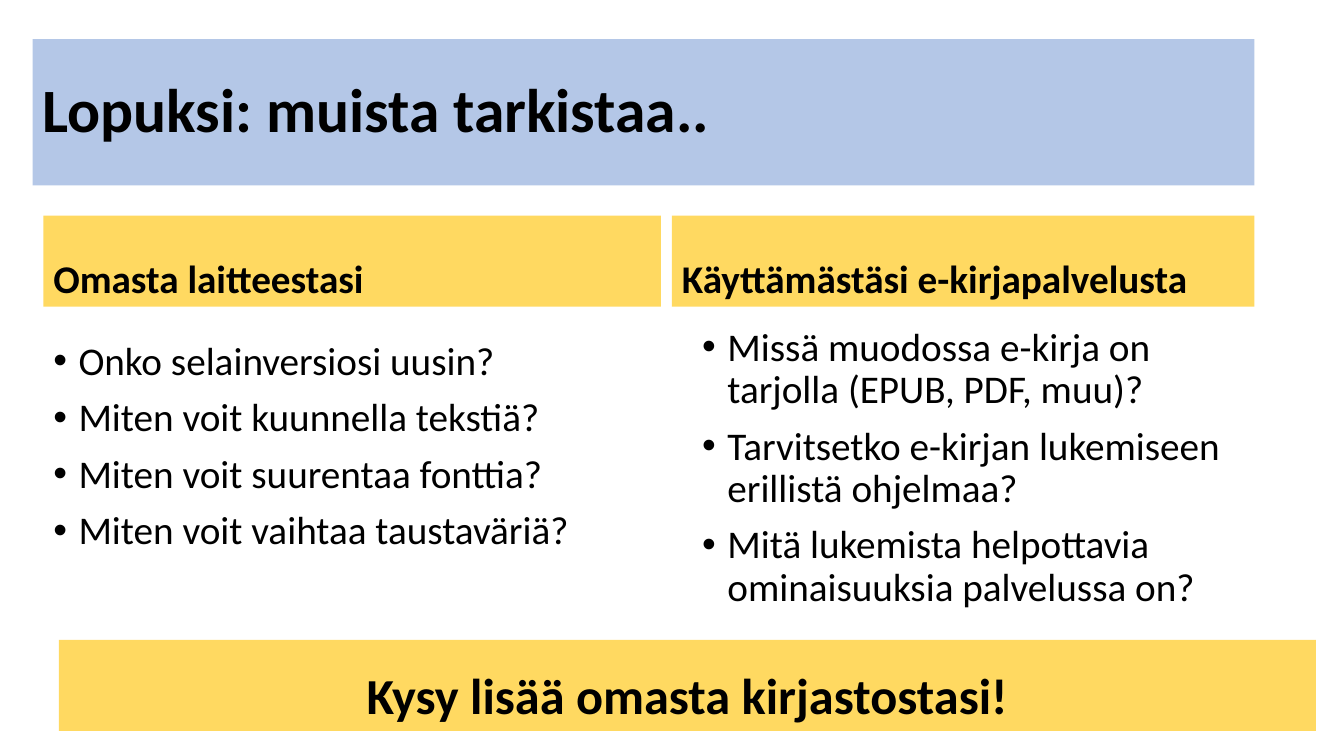
from lxml.etree import SubElement
from pptx import Presentation
from pptx.dml.color import RGBColor
from pptx.enum.shapes import MSO_SHAPE
from pptx.enum.text import MSO_ANCHOR, PP_ALIGN
from pptx.oxml.ns import qn
from pptx.util import Pt

COLORS = {"title": "B4C7E7", "band": "FFD961", "text": "000000"}
FONT = "Calibri"
BULLET_INDENT = Pt(18)
BAND_HEIGHT = 65
HEADING_TOP = 154

DEVICE_QUESTIONS = [
    "Onko selainversiosi uusin?",
    "Miten voit kuunnella tekstiä?",
    "Miten voit suurentaa fonttia?",
    "Miten voit vaihtaa taustaväriä?",
]
SERVICE_QUESTIONS = [
    "Missä muodossa e-kirja on tarjolla (EPUB, PDF, muu)?",
    "Tarvitsetko e-kirjan lukemiseen erillistä ohjelmaa?",
    "Mitä lukemista helpottavia ominaisuuksia palvelussa on?",
]


def add_bullet(paragraph):
    properties = paragraph._p.get_or_add_pPr()
    properties.set("marL", str(BULLET_INDENT))
    properties.set("indent", str(-BULLET_INDENT))
    SubElement(properties, qn("a:buFont"), typeface="Arial")
    SubElement(properties, qn("a:buChar"), char="•")


def write_text(shape, lines, size=28, bold=False, align=PP_ALIGN.LEFT,
               anchor=MSO_ANCHOR.TOP, space_before=10, bulleted=False):
    frame = shape.text_frame
    frame.word_wrap = True
    frame.vertical_anchor = anchor
    for index, line in enumerate(lines):
        paragraph = frame.add_paragraph() if index else frame.paragraphs[0]
        paragraph.alignment = align
        paragraph.line_spacing = 0.9
        paragraph.space_before = Pt(space_before)
        if bulleted:
            add_bullet(paragraph)
        run = paragraph.add_run()
        run.text = line
        run.font.name = FONT
        run.font.size = Pt(size)
        run.font.bold = bold
        run.font.color.rgb = RGBColor.from_string(COLORS["text"])


def add_band(slide, text, left, top, width, height=BAND_HEIGHT, color="band",
             anchor=MSO_ANCHOR.BOTTOM, **text_format):
    shape = slide.shapes.add_shape(
        MSO_SHAPE.RECTANGLE, Pt(left), Pt(top), Pt(width), Pt(height))
    shape.shadow.inherit = False
    shape.fill.solid()
    shape.fill.fore_color.rgb = RGBColor.from_string(COLORS[color])
    shape.line.fill.background()
    write_text(shape, [text], bold=True, anchor=anchor, **text_format)


def add_bullet_list(slide, lines, left, top, width, height):
    shape = slide.shapes.add_textbox(Pt(left), Pt(top), Pt(width), Pt(height))
    write_text(shape, lines, bulleted=True)


def main():
    presentation = Presentation()
    presentation.slide_width = Pt(960)
    presentation.slide_height = Pt(540)
    slide = presentation.slides.add_slide(presentation.slide_layouts[6])

    add_band(slide, "Lopuksi: muista tarkistaa..", 23.25, 28, 872.75, 104.5,
             color="title", anchor=MSO_ANCHOR.MIDDLE, size=44, space_before=0)
    add_band(slide, "Omasta laitteestasi", 31, HEADING_TOP, 441)
    add_bullet_list(slide, DEVICE_QUESTIONS, 31, 240.5, 406, 197)
    add_band(slide, "Käyttämästäsi e-kirjapalvelusta", 480, HEADING_TOP, 416)
    add_bullet_list(slide, SERVICE_QUESTIONS, 494.5, 230.5, 408, 232)
    add_band(slide, "Kysy lisää omasta kirjastostasi!", 42, 457, 898,
             size=36, align=PP_ALIGN.CENTER)

    presentation.save("out.pptx")


if __name__ == "__main__":
    main()
